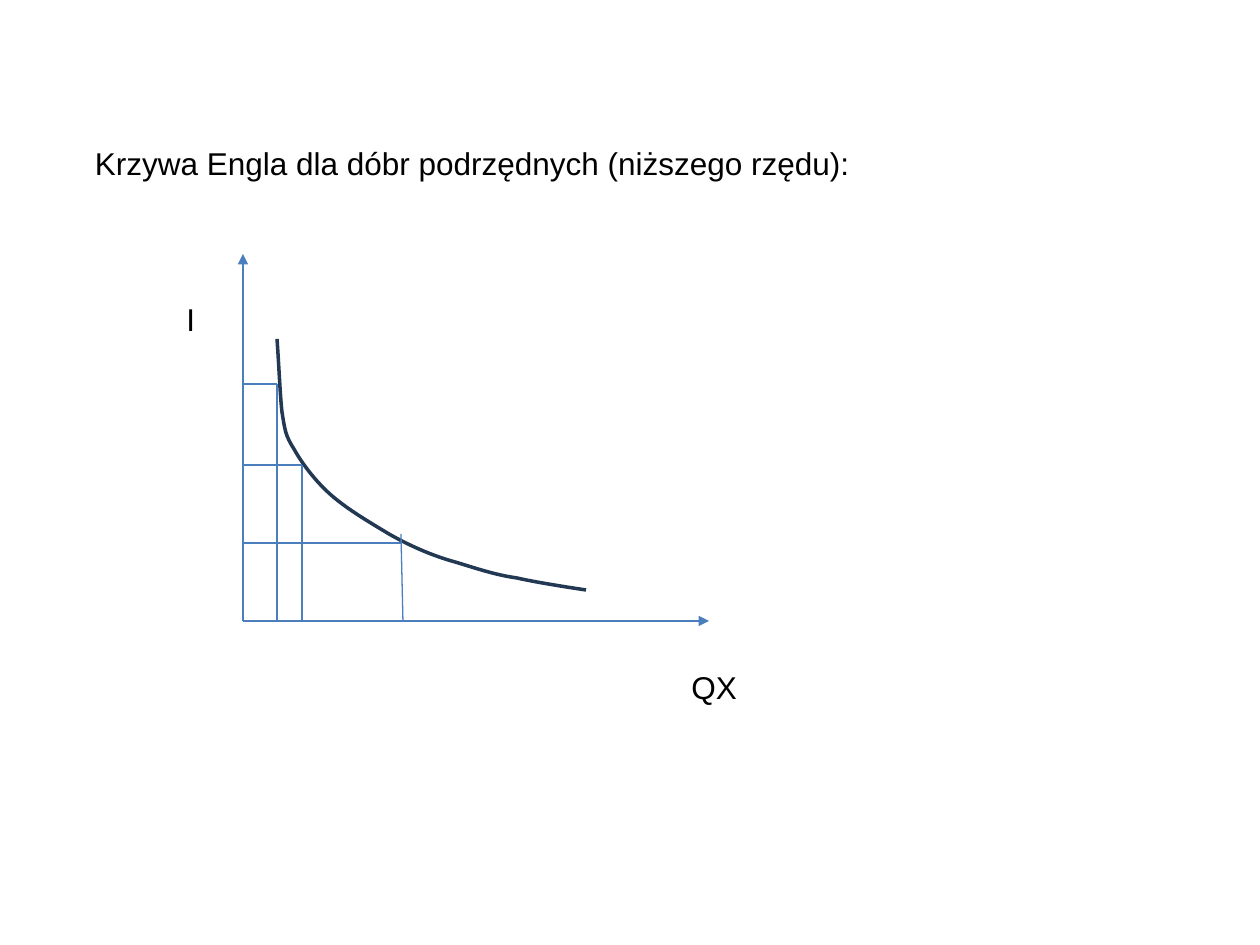
import lxml.etree
import pptx
import pptx.dml.color
import pptx.enum.shapes
import pptx.enum.text
import pptx.oxml.ns
import pptx.util
from dataclasses import dataclass

EMU_PER_PX = 914400 / 126


@dataclass(frozen=True)
class Theme:
    font: str = "Arial"
    text_size: int = 18
    text: str = "000000"
    axis: str = "4B7EBC"
    curve: str = "233953"
    axis_width: float = 0.75
    curve_width: float = 2


THEME = Theme()

# Positions inside the diagram box
GUIDE_POINTS = [(34, 130), (59, 211)]
CURVE_START = (34, 85)
CURVE_BEZIERS = [
    [(36, 112), (37, 140), (39, 158)],
    [(42, 176), (42, 181), (51, 195)],
    [(58, 208), (72, 227), (88, 241)],
    [(104, 255), (126, 268), (146, 280)],
    [(167, 292), (190, 302), (212, 308)],
    [(232, 314), (252, 321), (274, 324)],
    [(295, 329), (343, 336), (343, 336)],
]


def emu(px):
    return pptx.util.Emu(round(px * EMU_PER_PX))


def color(value):
    return pptx.dml.color.RGBColor.from_string(value)


def qn(tag):
    return pptx.oxml.ns.qn(tag)


def place(shape, box):
    shape.left, shape.top, shape.width, shape.height = map(emu, box)


def write(shape, text):
    shape.text_frame.text = text
    para = shape.text_frame.paragraphs[0]
    para.alignment = pptx.enum.text.PP_ALIGN.LEFT
    for span in para.runs:
        span.font.name = THEME.font
        span.font.size = pptx.util.Pt(THEME.text_size)
        span.font.color.rgb = color(THEME.text)


def add_line(page, box, start, end, arrow=False):
    left, top = box[:2]
    line = page.shapes.add_connector(
        pptx.enum.shapes.MSO_CONNECTOR.STRAIGHT,
        emu(left + start[0]), emu(top + start[1]),
        emu(left + end[0]), emu(top + end[1]))
    line.line.color.rgb = color(THEME.axis)
    line.line.width = pptx.util.Pt(THEME.axis_width)
    if arrow:
        outline = line.line._get_or_add_ln()
        lxml.etree.SubElement(outline, qn("a:tailEnd"), type="triangle")
    lxml.etree.SubElement(line._element.spPr, qn("a:effectLst"))


def add_label(page, box, text):
    label = page.shapes.add_textbox(*map(emu, box))
    label.text_frame.word_wrap = False
    label.text_frame.auto_size = pptx.enum.text.MSO_AUTO_SIZE.SHAPE_TO_FIT_TEXT
    write(label, text)


def add_curve(page, box):
    builder = page.shapes.build_freeform(*CURVE_START, scale=EMU_PER_PX)
    builder.add_line_segments(
        [point for bezier in CURVE_BEZIERS for point in bezier], close=False)
    curve = builder.convert_to_shape(emu(box[0]), emu(box[1]))
    curve.shadow.inherit = False
    curve.fill.background()
    curve.line.color.rgb = color(THEME.curve)
    curve.line.width = pptx.util.Pt(THEME.curve_width)

    # Join every three line segments into one cubic Bézier segment
    segments = list(curve._element.iter(qn("a:lnTo")))
    for first in range(0, len(segments), 3):
        bezier = lxml.etree.Element(qn("a:cubicBezTo"))
        segments[first].addprevious(bezier)
        for segment in segments[first:first + 3]:
            bezier.append(segment[0])
            segment.getparent().remove(segment)


def add_title(page, box):
    title = page.shapes.title
    place(title, box)
    frame = title.text_frame
    frame.margin_left = frame.margin_right = 0
    frame.margin_top = frame.margin_bottom = 0
    frame.vertical_anchor = pptx.enum.text.MSO_ANCHOR.MIDDLE
    write(title, "Krzywa Engla dla dóbr podrzędnych (niższego rzędu):")


def add_engel_diagram(page, box):
    left, top, width, height = box
    origin = (0, height)

    # Axes
    add_line(page, box, origin, (0, 0), arrow=True)
    add_line(page, box, origin, (width, height), arrow=True)

    # Engel curve and axis labels
    add_curve(page, box)
    add_label(page, (left - 69, top + 40, 34, 50), "I")
    add_label(page, (left + 436, top + 408, 72, 50), "QX")

    # Guides from the curve to both axes
    for x, y in GUIDE_POINTS:
        add_line(page, box, (0, y), (x, y))
        add_line(page, box, (x, y), (x, height))
    add_line(page, box, (0, 289), (159, 289))
    add_line(page, box, (158, 280), (160, height))


def main():
    deck = pptx.Presentation()
    deck.slide_width, deck.slide_height = emu(1260), emu(945)
    page = deck.slides.add_slide(deck.slide_layouts.get_by_name("Title Only"))
    add_title(page, (95, 84, 1071, 158))
    add_engel_diagram(page, (243, 254, 466, 367))
    deck.save("out.pptx")


if __name__ == "__main__":
    main()
